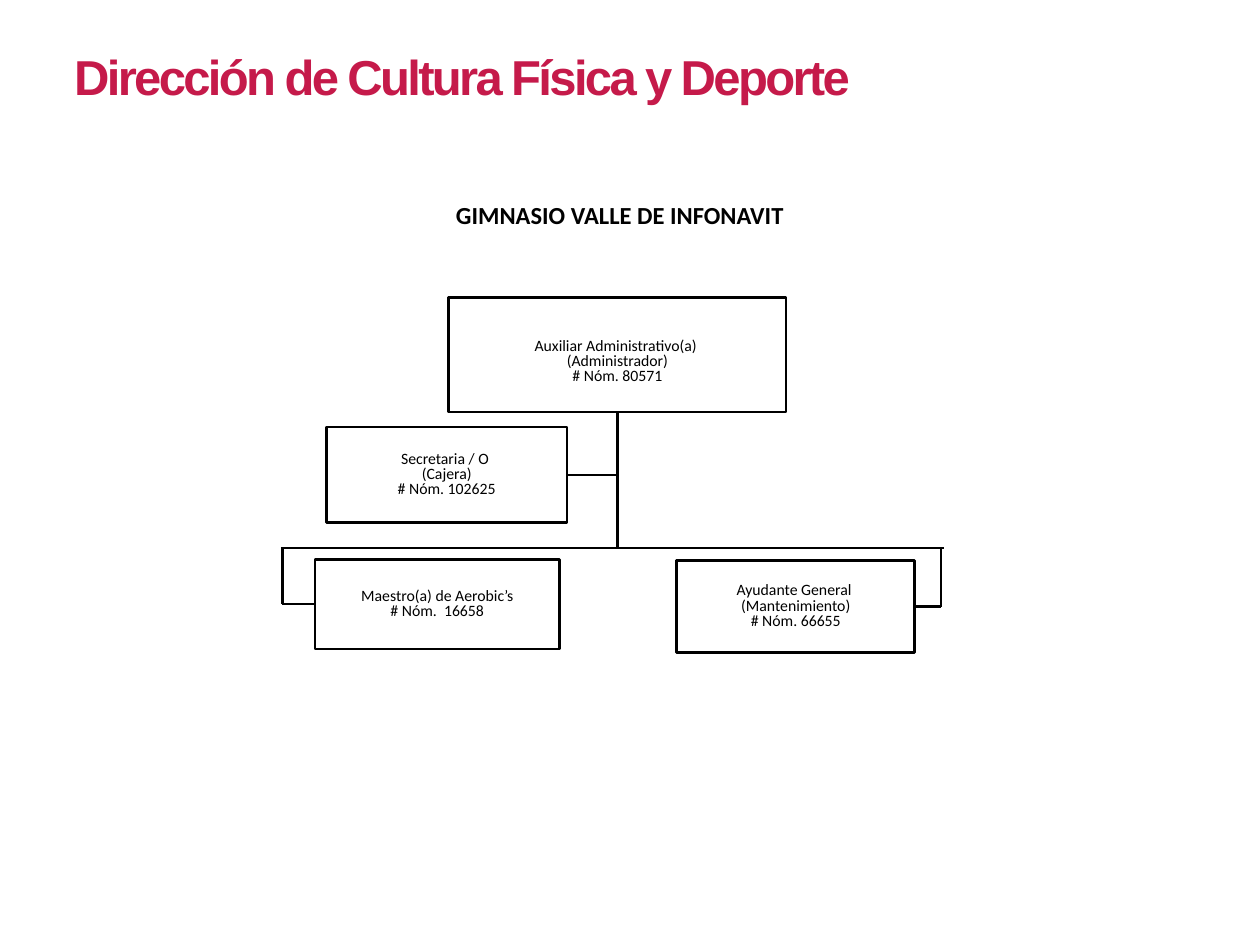
from lxml.etree import SubElement
from pptx import Presentation
from pptx.dml.color import RGBColor
from pptx.enum.shapes import MSO_CONNECTOR, MSO_SHAPE
from pptx.enum.text import MSO_ANCHOR, PP_ALIGN
from pptx.oxml.ns import qn
from pptx.util import Inches, Pt

COLORS = {"title": "C51A4A", "ink": "000000", "paper": "FFFFFF"}
TITLE = "Dirección de Cultura Física y Deporte"
SUBTITLE = "GIMNASIO VALLE DE INFONAVIT"
POSTS = {
    "admin": ((3.56, 2.36, 2.68, 0.91), 0.17,
              ["Auxiliar Administrativo(a) ", "(Administrador)", "# Nóm. 80571"]),
    "cashier": ((2.59, 3.39, 1.91, 0.76), 0.05,
                ["Secretaria / O ", "(Cajera)", "# Nóm. 102625"]),
    "teacher": ((2.5, 4.44, 1.94, 0.71), 0.05,
                ["Maestro(a) de Aerobic’s", "# Nóm.  16658"]),
    "helper": ((5.37, 4.45, 1.89, 0.73), 0.05,
               ["Ayudante General ", "(Mantenimiento)", "# Nóm. 66655"]),
}
TRUNK_X = 4.9
BAR_LEFT, BAR_RIGHT, BAR_Y = 2.23, 7.49, 4.35
DROP_LEFT, DROP_RIGHT = 2.24, 7.47
BOTTOM, LEFT, RIGHT = 2, 1, 3


def color(name):
    return RGBColor.from_string(COLORS[name])


def add_run(paragraph, text, size, font="Calibri", ink="ink", bold=False):
    run = paragraph.add_run()
    run.text = text
    run.font.size = Pt(size)
    run.font.name = font
    run.font.bold = bold
    run.font.color.rgb = color(ink)
    return run


def add_heading(slide, area, text, wrap, **style):
    heading = slide.shapes.add_textbox(*map(Inches, area))
    heading.text_frame.word_wrap = wrap
    return add_run(heading.text_frame.paragraphs[0], text, **style)


def add_post(slide, area, top_inset, lines):
    post = slide.shapes.add_shape(MSO_SHAPE.RECTANGLE, *map(Inches, area))
    post.shadow.inherit = False
    post.fill.solid()
    post.fill.fore_color.rgb = color("paper")
    post.line.color.rgb = color("ink")
    post.line.width = Pt(1.5)
    frame = post.text_frame
    frame.word_wrap = False
    frame.vertical_anchor = MSO_ANCHOR.MIDDLE
    frame.margin_top = Inches(top_inset)
    for index, line in enumerate(lines):
        paragraph = frame.add_paragraph() if index else frame.paragraphs[0]
        paragraph.alignment = PP_ALIGN.CENTER
        paragraph.line_spacing = 0.8
        add_run(paragraph, line, 9)
    return post


def add_line(slide, start, end, post=None, side=None):
    line = slide.shapes.add_connector(
        MSO_CONNECTOR.STRAIGHT, *map(Inches, (*start, *end)))
    line.line.color.rgb = color("ink")
    line.line.width = Pt(1.5)
    SubElement(line._element.spPr, qn("a:effectLst"))
    if post is not None:
        line.begin_connect(post, side)


def middle(name):
    left, top, width, height = POSTS[name][0]
    return top + height / 2


def main():
    deck = Presentation()
    deck.slide_width, deck.slide_height = Inches(10), Inches(7.5)
    slide = deck.slides.add_slide(deck.slide_layouts[6])

    title = add_heading(slide, (0.49, 0.32, 6.81, 0.57), TITLE, True,
                        size=28, font="Arial", ink="title", bold=True)
    title._r.get_or_add_rPr().set("spc", "-150")
    add_heading(slide, (3.52, 1.54, 2.82, 0.34), SUBTITLE, False,
                size=14, bold=True)

    posts = {name: add_post(slide, *post) for name, post in POSTS.items()}

    trunk_end = (TRUNK_X, BAR_Y)
    add_line(slide, trunk_end, trunk_end, posts["admin"], BOTTOM)
    add_line(slide, (BAR_LEFT, BAR_Y), (BAR_RIGHT, BAR_Y))
    for name, x, side in [("cashier", TRUNK_X, RIGHT),
                          ("teacher", DROP_LEFT, LEFT),
                          ("helper", DROP_RIGHT, RIGHT)]:
        branch_end = (x, middle(name))
        add_line(slide, branch_end, branch_end, posts[name], side)
        if name != "cashier":
            add_line(slide, (x, BAR_Y), branch_end)

    deck.save("out.pptx")


if __name__ == "__main__":
    main()
